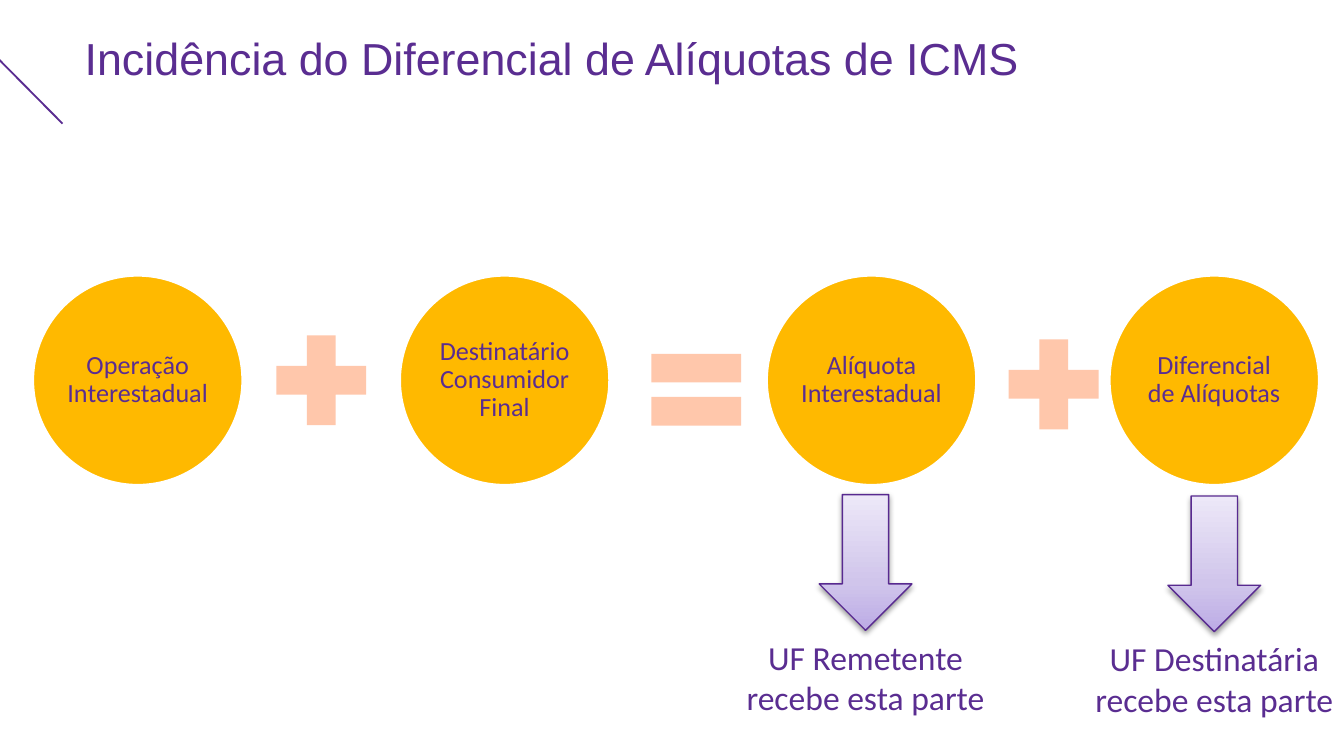
import pptx
import pptx.dml.color
import pptx.enum.shapes
import pptx.enum.text
import pptx.oxml
import pptx.oxml.ns
import pptx.util
from dataclasses import dataclass

EMU_PER_PX = 4572  # 200 px to the inch
PURPLE, AMBER, PEACH, WHITE = "5A2D91", "FFB900", "FFC7AB", "FFFFFF"
SHAPES = pptx.enum.shapes.MSO_SHAPE
ALIGN = pptx.enum.text.PP_ALIGN
ANCHOR = pptx.enum.text.MSO_ANCHOR
CIRCLE_TOP, CIRCLE_SIZE, SIGN_SIZE = 409, 314, 182


@dataclass
class Term:
    label: str
    left: int


@dataclass
class Sign:
    kind: SHAPES
    left: int
    top: int


@dataclass
class Share:
    """An arrow down from a term to the state that receives that part."""
    label: str
    arrow_left: int
    arrow_top: int


TERMS = [
    Term("Operação Interestadual", 48),
    Term("Destinatário Consumidor Final", 594),
    Term("Alíquota Interestadual", 1140),
    Term("Diferencial de Alíquotas", 1650),
]
SIGNS = [
    Sign(SHAPES.MATH_PLUS, 387, 475),
    Sign(SHAPES.MATH_EQUAL, 945, 489),
    Sign(SHAPES.MATH_PLUS, 1477, 481),
]
SHARES = [
    Share("UF Remetente recebe esta parte", 1219, 736),
    Share("UF Destinatária recebe esta parte", 1738, 738),
]


def px(length: int) -> pptx.util.Emu:
    return pptx.util.Emu(length * EMU_PER_PX)


def box(left: int, top: int, width: int, height: int) -> tuple:
    return px(left), px(top), px(width), px(height)


def color(hex_code: str) -> pptx.dml.color.RGBColor:
    return pptx.dml.color.RGBColor.from_string(hex_code)


def xml(tag: str, body: str):
    return pptx.oxml.parse_xml(f"<a:{tag} {pptx.oxml.ns.nsdecls('a')}>{body}</a:{tag}>")


def write(frame, text: str, font_name: str, size: int, align: ALIGN, spacing: float = 1.0) -> None:
    frame.word_wrap = True
    frame.text = text
    paragraph = frame.paragraphs[0]
    paragraph.alignment = align
    paragraph.line_spacing = spacing
    font = paragraph.runs[0].font
    font.name, font.size = font_name, pptx.util.Pt(size)
    font.color.rgb = color(PURPLE)


def draw_title(slide, text: str) -> None:
    title = slide.shapes.title
    title.left, title.top, title.width, title.height = box(106, 36, 1796, 88)
    title.text_frame.vertical_anchor = ANCHOR.TOP
    write(title.text_frame, text, "Arial", 24, ALIGN.LEFT)


def draw_corner_line(slide) -> None:
    line = slide.shapes.add_connector(
        pptx.enum.shapes.MSO_CONNECTOR.STRAIGHT, px(-10), px(80), px(93), px(184))
    line.line.color.rgb = color(PURPLE)
    line.line.width = pptx.util.Pt(1)
    line._element.spPr.append(xml("effectLst", ""))


def draw_term(slide, term: Term) -> None:
    circle = slide.shapes.add_shape(
        SHAPES.OVAL, *box(term.left, CIRCLE_TOP, CIRCLE_SIZE, CIRCLE_SIZE))
    circle.shadow.inherit = False
    circle.fill.solid()
    circle.fill.fore_color.rgb = color(AMBER)
    circle.line.color.rgb = color(WHITE)
    circle.line.width = pptx.util.Pt(2)
    frame = circle.text_frame
    frame.margin_left = frame.margin_right = frame.margin_top = frame.margin_bottom = px(4)
    frame.vertical_anchor = ANCHOR.MIDDLE
    write(frame, term.label, "Calibri", 14, ALIGN.CENTER, 0.9)


def draw_sign(slide, sign: Sign) -> None:
    shape = slide.shapes.add_shape(sign.kind, *box(sign.left, sign.top, SIGN_SIZE, SIGN_SIZE))
    shape.shadow.inherit = False
    shape.fill.solid()
    shape.fill.fore_color.rgb = color(PEACH)
    shape.line.fill.background()


def draw_share(slide, share: Share) -> None:
    arrow = slide.shapes.add_shape(
        SHAPES.DOWN_ARROW, *box(share.arrow_left, share.arrow_top, 138, 202))
    arrow.line.color.rgb = color("582A90")
    arrow.line.width = pptx.util.Pt(0.75)
    # Gradient from dark at the tip to light at the top, with a soft shadow
    stops = "".join(
        f'<a:gs pos="{percent * 1000}"><a:srgbClr val="{code}"/></a:gs>'
        for percent, code in [(0, "BCABE5"), (35, "D0C5EB"), (100, "EDE8F8")])
    properties = arrow._element.spPr
    properties.find(pptx.oxml.ns.qn("a:prstGeom")).addnext(
        xml("gradFill", f'<a:gsLst>{stops}</a:gsLst><a:lin ang="16200000" scaled="0"/>'))
    properties.append(xml(
        "effectLst",
        '<a:outerShdw blurRad="40000" dist="20000" dir="5400000" rotWithShape="0">'
        '<a:srgbClr val="000000"><a:alpha val="38000"/></a:srgbClr></a:outerShdw>'))
    # Caption under the arrow tip
    caption = slide.shapes.add_textbox(
        *box(share.arrow_left - 130, share.arrow_top + 202, 398, 142))
    write(caption.text_frame, share.label, "Calibri", 18, ALIGN.CENTER)


def main() -> None:
    deck = pptx.Presentation()
    deck.slide_width, deck.slide_height = px(2000), px(1125)
    slide = deck.slides.add_slide(deck.slide_layouts[5])

    # Heading
    draw_corner_line(slide)
    draw_title(slide, "Incidência do Diferencial de Alíquotas de ICMS")

    # Equation of the tax rates
    for term in TERMS:
        draw_term(slide, term)
    for sign in SIGNS:
        draw_sign(slide, sign)

    # Who receives each part
    for share in SHARES:
        draw_share(slide, share)

    deck.save("out.pptx")


if __name__ == "__main__":
    main()
